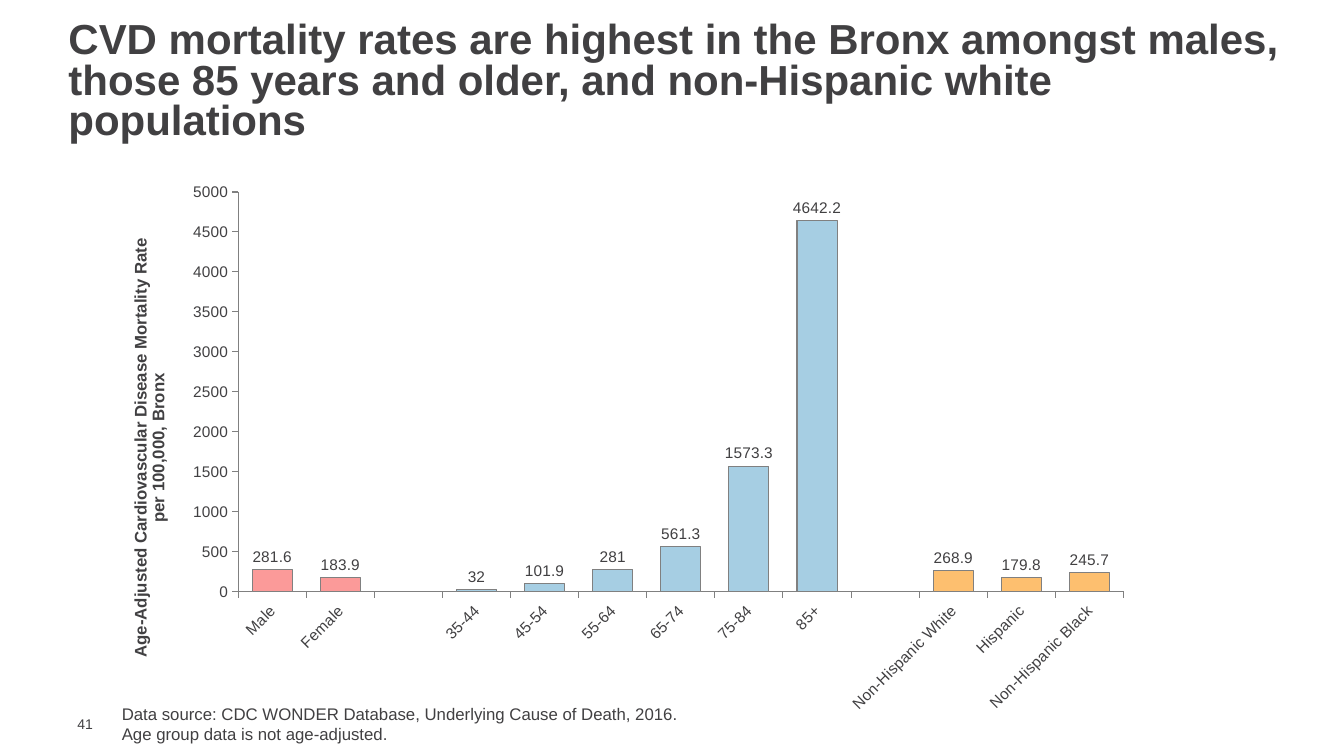
from pptx import Presentation
from pptx.chart.data import CategoryChartData
from pptx.dml.color import RGBColor
from pptx.enum.chart import XL_CHART_TYPE, XL_LABEL_POSITION, XL_TICK_MARK
from pptx.enum.text import MSO_ANCHOR
from pptx.oxml import parse_xml
from pptx.oxml.ns import nsdecls
from pptx.util import Pt

INK, EDGE = "414042", "808080"
PINK, BLUE, GOLD = "FB9A99", "A6CEE3", "FDBF6F"


def style(font, size, bold=False):
    font.name, font.size, font.bold = "Arial", Pt(size), bold
    font.color.rgb = RGBColor.from_string(INK)


def add_text(box, lines, size, bold=False, anchor=MSO_ANCHOR.TOP, pad=3.6, space=1.0):
    """Add a text box with one paragraph per line; box is left, top, width, height."""
    frame = slide.shapes.add_textbox(*map(Pt, box)).text_frame
    frame.word_wrap = True
    frame.vertical_anchor = anchor
    frame.margin_left = Pt(7.2)
    frame.margin_right = Pt(2 * pad)
    frame.margin_top = frame.margin_bottom = Pt(pad)
    for i, line in enumerate(lines):
        para = frame.add_paragraph() if i else frame.paragraphs[0]
        para.line_spacing = space
        run = para.add_run()
        run.text = line
        style(run.font, size, bold)


deck = Presentation()
deck.slide_width, deck.slide_height = Pt(960), Pt(540)
slide = deck.slides.add_slide(deck.slide_layouts[6])

add_text((48.2, 511.2, 31, 12.2), ["41"], 10, anchor=MSO_ANCHOR.MIDDLE, pad=0)
add_text((41.8, 12.2, 882, 94.3),
         ["CVD mortality rates are highest in the Bronx amongst males, "
          "those 85 years and older, and non-Hispanic white populations"],
         30, bold=True, anchor=MSO_ANCHOR.MIDDLE, space=0.8)
add_text((79.9, 499, 699, 36),
         ["Data source: CDC WONDER Database, Underlying Cause of Death, 2016.",
          "Age group data is not age-adjusted."], 12)

# Mortality rates: sex, age and ethnicity, with an empty slot between groups
groups = [
    (PINK, [("Male", 281.6), ("Female", 183.9)]),
    (BLUE, [("35-44", 32), ("45-54", 101.9), ("55-64", 281),
            ("65-74", 561.3), ("75-84", 1573.3), ("85+", 4642.2)]),
    (GOLD, [("Non-Hispanic White", 268.9), ("Hispanic", 179.8),
            ("Non-Hispanic Black", 245.7)]),
]
bars = []
for color, rows in groups:
    if bars:
        bars.append(("", None, None))
    bars += [(name, rate, color) for name, rate in rows]

data = CategoryChartData()
data.categories = [name for name, rate, color in bars]
data.add_series("Series 1", [rate for name, rate, color in bars])
chart = slide.shapes.add_chart(XL_CHART_TYPE.COLUMN_CLUSTERED, Pt(79.9), Pt(124.6),
                               Pt(733.7), Pt(392.4), data).chart
chart.has_legend = chart.has_title = False
style(chart.font, 18)

plot = chart.plots[0]
plot.vary_by_categories = False
plot.gap_width, plot.overlap = 70, -27
plot.has_data_labels = True
labels = plot.data_labels
labels.show_value = True
labels.position = XL_LABEL_POSITION.OUTSIDE_END
style(labels.font, 11)

for i, (name, rate, color) in enumerate(bars):
    if color:
        form = plot.series[0].points[i].format
        form.fill.solid()
        form.fill.fore_color.rgb = RGBColor.from_string(color)
        form.line.color.rgb = RGBColor.from_string(EDGE)
        form.line.width = Pt(0.75)

for axis in (chart.category_axis, chart.value_axis):
    axis.has_major_gridlines = False
    axis.major_tick_mark = XL_TICK_MARK.OUTSIDE
    axis.minor_tick_mark = XL_TICK_MARK.NONE
    axis.format.line.color.rgb = RGBColor.from_string(EDGE)
    axis.format.line.width = Pt(0.75)
    style(axis.tick_labels.font, 11)

scale = chart.value_axis
scale.minimum_scale, scale.maximum_scale, scale.major_unit = 0, 5000, 500
scale.has_title = True
run = scale.axis_title.text_frame.paragraphs[0].add_run()
run.text = "Age-Adjusted Cardiovascular Disease Mortality Rate per 100,000, Bronx"
style(run.font, 12, True)

# Slanted category labels, upright axis title, fixed plot area
root = chart.element
for route, turn in (("//c:catAx/c:txPr/a:bodyPr", -45), ("//c:valAx/c:title//a:bodyPr", -90)):
    for body in root.xpath(route):
        body.set("rot", str(turn * 60000))
        body.set("vert", "horz")
area = root.xpath("//c:plotArea")[0]
for old in area.xpath("./c:layout"):
    area.remove(old)
sizes = "".join(f'<c:{key} val="{val}"/>' for key, val in (
    ("layoutTarget", "inner"), ("xMode", "edge"), ("yMode", "edge"),
    ("x", 0.123), ("y", 0.032), ("w", 0.862), ("h", 0.728)))
area.insert(0, parse_xml(f'<c:layout {nsdecls("c")}><c:manualLayout>{sizes}'
                         '</c:manualLayout></c:layout>'))

deck.save("out.pptx")
